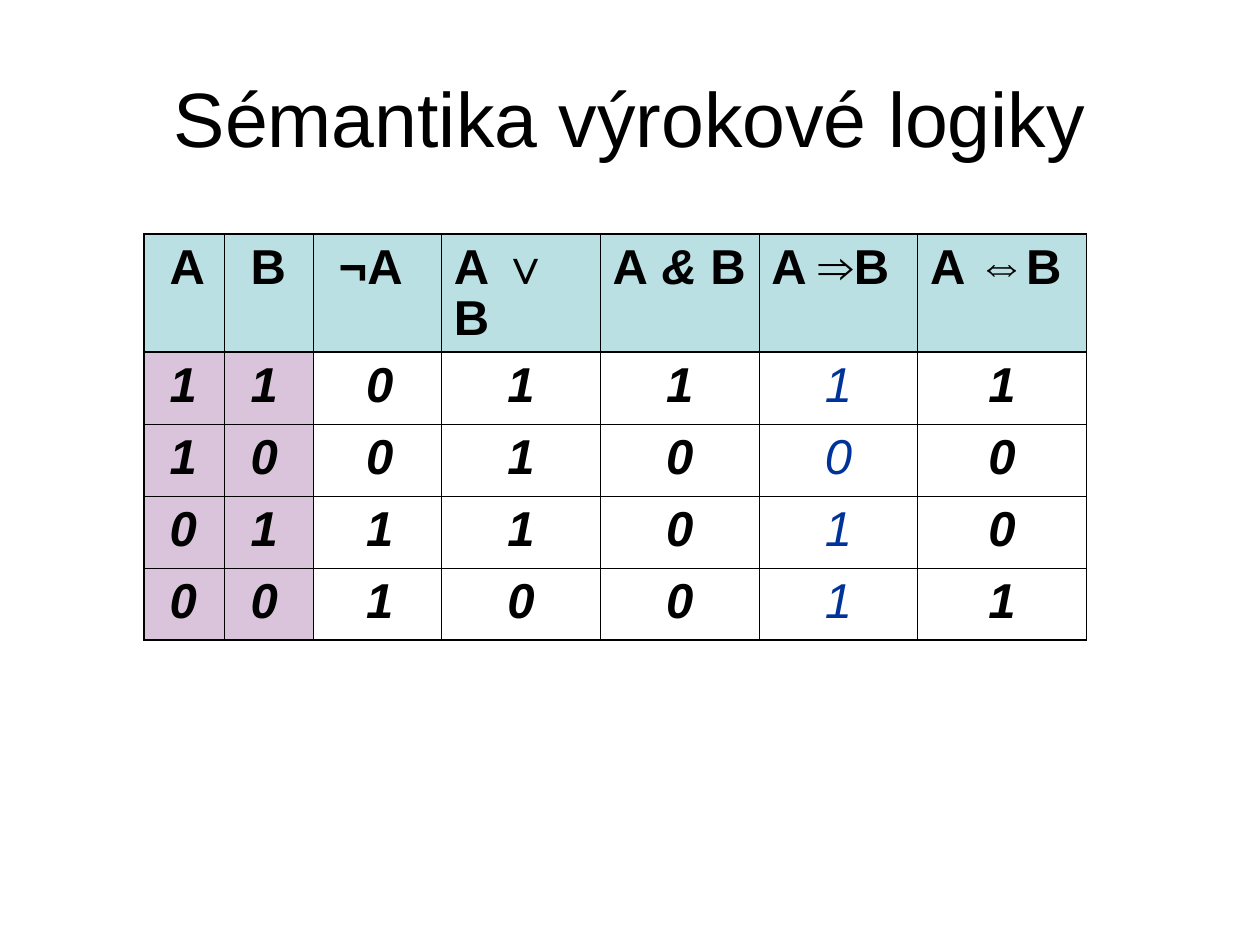
from pptx import Presentation
from pptx.dml.color import RGBColor
from pptx.enum.text import MSO_ANCHOR, PP_ALIGN
from pptx.oxml import parse_xml
from pptx.oxml.ns import nsdecls
from pptx.util import Cm, Pt

BLACK = RGBColor(0x00, 0x00, 0x00)
BLUE = RGBColor(0x00, 0x33, 0x99)
TEAL = RGBColor(0xBB, 0xE0, 0xE3)
MAUVE = RGBColor(0xDA, 0xC4, 0xDB)
THIN, THICK = Pt(0.45), Pt(1.08)

# Header runs: text, bold, italic
HEADS = [
    [("A", True, False)],
    [("B", True, False)],
    [("¬", True, True), ("A", True, False)],
    [("A ", True, False), ("∨ ", True, True), ("B", True, False)],
    [("A", True, False), (" & ", True, True), ("B", True, False)],
    [("A ", True, False), ("⇒", False, True), ("B", True, False)],
    [("A ", True, False), ("⇔", False, True), ("B", True, False)],
]
TRUTH = ["1101111", "1001000", "0111010", "0010011"]
WIDTHS = [1.63, 1.78, 2.59, 3.2, 3.2, 3.2, 3.4]
INPUTS = 2   # columns A and B
LEFT = 3     # columns set from the left
IMPLY = 5    # the highlighted column


class Deck:
    font = "Arial"

    def __init__(self):
        self.prs = Presentation()
        self.prs.slide_width, self.prs.slide_height = Cm(25.4), Cm(19.05)
        self.slide = self.prs.slides.add_slide(self.prs.slide_layouts[5])

    def style(self, para, size, color=BLACK):
        para.font.name, para.font.size = self.font, Pt(size)
        para.font.color.rgb = color

    def title(self, text):
        box = self.slide.shapes.title
        box.left, box.top = Cm(1.27), Cm(0.76)
        box.width, box.height = Cm(22.86), Cm(3.18)
        box.text_frame.text = text
        box.text_frame.vertical_anchor = MSO_ANCHOR.MIDDLE
        para = box.text_frame.paragraphs[0]
        para.alignment = PP_ALIGN.CENTER
        self.style(para, 44)

    def border(self, cell, sides):
        props = cell._tc.get_or_add_tcPr()
        for side, width in sides.items():
            props.append(parse_xml(
                f'<a:ln{side} {nsdecls("a")} w="{width}"><a:solidFill>'
                f'<a:srgbClr val="{BLACK}"/></a:solidFill></a:ln{side}>'))

    def cell(self, cell, runs, fill=None, color=BLACK, indent=None):
        cell.margin_left = cell.margin_right = Cm(0.25)
        cell.margin_top, cell.margin_bottom = Cm(0.2), Cm(0.13)
        if fill is None:
            cell.fill.background()
        else:
            cell.fill.solid()
            cell.fill.fore_color.rgb = fill
        para = cell.text_frame.paragraphs[0]
        para.line_spacing, para.space_before = 0.93, Pt(7)
        if indent is None:
            para.alignment = PP_ALIGN.CENTER
        else:
            para._p.get_or_add_pPr().set("marL", str(Cm(indent)))
        self.style(para, 28, color)
        for text, bold, slant in runs:
            run = para.add_run()
            run.text = text
            run.font.bold, run.font.italic = bold, slant

    def table(self):
        rows, cols = len(TRUTH) + 1, len(WIDTHS)
        table = self.slide.shapes.add_table(
            rows, cols, Cm(2.9), Cm(4.72), Cm(sum(WIDTHS)), Cm(7.4)).table
        table.first_row = table.horz_banding = False
        for col, width in zip(table.columns, WIDTHS):
            col.width = Cm(width)
        for r, row in enumerate(table.rows):
            row.height = Cm(1.45 if r else 1.6)
            for c, cell in enumerate(row.cells):
                # Thick frame and header rule, thin inner grid
                self.border(cell, {
                    "L": THIN if c else THICK,
                    "R": THICK if c == cols - 1 else THIN,
                    "T": THICK if r < 2 else THIN,
                    "B": THICK if r in (0, rows - 1) else THIN})
                if r == 0:
                    self.cell(cell, HEADS[c], TEAL,
                              indent=0.27 if c < LEFT else 0)
                    continue
                # Truth values
                indent = None
                if c < LEFT:
                    indent = 0.27 if c < INPUTS else 0.82
                self.cell(cell, [(TRUTH[r - 1][c], c != IMPLY, True)],
                          MAUVE if c < INPUTS else None,
                          BLUE if c == IMPLY else BLACK, indent)


deck = Deck()
deck.title("Sémantika výrokové logiky")
deck.table()
deck.prs.save("out.pptx")
